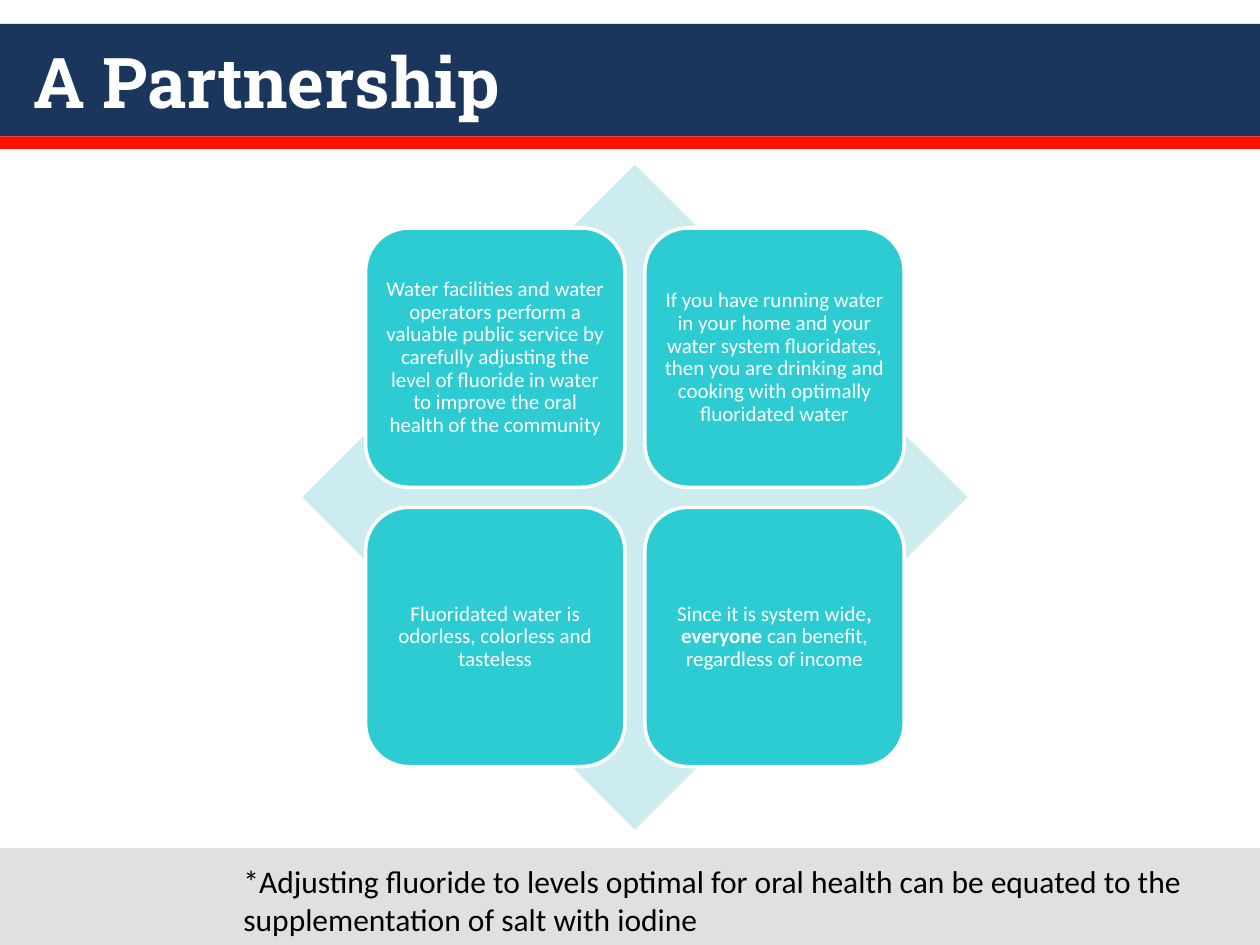
from itertools import product

from pptx import Presentation
from pptx.dml.color import RGBColor
from pptx.enum.shapes import MSO_SHAPE
from pptx.enum.text import MSO_ANCHOR, MSO_AUTO_SIZE, PP_ALIGN
from pptx.util import Pt

NAVY = RGBColor(0x1B, 0x36, 0x5D)
RED = RGBColor(0xFF, 0x0F, 0x00)
GREY = RGBColor(0xE0, 0xE0, 0xE0)
PALE = RGBColor(0xCD, 0xEC, 0xEF)
TEAL = RGBColor(0x2D, 0xCC, 0xD3)
WHITE = RGBColor(0xFF, 0xFF, 0xFF)
BLACK = RGBColor(0x00, 0x00, 0x00)

TITLE = dict(name="Roboto Slab", size=Pt(40), bold=True)
TILE = dict(name="Calibri", size=Pt(12))
NOTE = dict(name="Calibri", size=Pt(18))

# Each tile is a list of (text, bold) runs, in row order.
TILES = [
    [("Water facilities and water operators perform a valuable public service "
      "by carefully adjusting the level of fluoride in water to improve the "
      "oral health of the community", False)],
    [("If you have running water in your home and your water system "
      "fluoridates, then you are drinking and cooking with optimally "
      "fluoridated water", False)],
    [("Fluoridated water is odorless, colorless and tasteless", False)],
    [("Since it is system wide", False), (", everyone ", True),
     ("can benefit, regardless of income", False)],
]
FOOTNOTE = ("*Adjusting fluoride to levels optimal for oral health can be "
            "equated to the supplementation of salt with iodine")


def add_run(p, text, color, fmt):
    r = p.add_run()
    r.text = text
    r.font.color.rgb = color
    for key, value in fmt.items():
        setattr(r.font, key, value)


def add_filled(shapes, kind, x, y, w, h, fill):
    sp = shapes.add_shape(kind, Pt(x), Pt(y), Pt(w), Pt(h))
    sp.shadow.inherit = False
    sp.fill.solid()
    sp.fill.fore_color.rgb = fill
    sp.line.fill.background()
    return sp


def add_header(s, x, y, w, h, stripe):
    """Navy band with the title, above a red stripe."""
    add_filled(s.shapes, MSO_SHAPE.RECTANGLE, x, y, w, h, NAVY)
    add_filled(s.shapes, MSO_SHAPE.RECTANGLE, x, y + h, w, stripe, RED)
    title = s.shapes.title
    s.shapes._spTree.append(title._element)  # bring in front of the band
    title.left, title.top = Pt(x + 12), Pt(y)
    title.width, title.height = Pt(w - 24), Pt(h)
    tf = title.text_frame
    tf.auto_size = MSO_AUTO_SIZE.NONE
    tf.vertical_anchor = MSO_ANCHOR.MIDDLE
    p = tf.paragraphs[0]
    p.alignment = PP_ALIGN.LEFT
    add_run(p, "A Partnership", WHITE, TITLE)


def add_tile(shapes, x, y, side, runs):
    sp = add_filled(shapes, MSO_SHAPE.ROUNDED_RECTANGLE, x, y, side, side, TEAL)
    sp.line.color.rgb = WHITE
    sp.line.width = Pt(2)
    tf = sp.text_frame
    tf.word_wrap = True
    tf.vertical_anchor = MSO_ANCHOR.MIDDLE
    for edge in ("left", "right", "top", "bottom"):
        setattr(tf, f"margin_{edge}", Pt(3.6))
    p = tf.paragraphs[0]
    p.alignment = PP_ALIGN.CENTER
    p.line_spacing = 0.9
    for text, bold in runs:
        add_run(p, text, WHITE, dict(TILE, bold=bold))


def add_matrix(s, x, y, side):
    """Diamond with four tiles, sized as shares of its side."""
    group = s.shapes.add_group_shape()
    add_filled(group.shapes, MSO_SHAPE.DIAMOND, x, y, side, side, PALE)
    margin, tile = 0.095 * side, 0.39 * side
    step = side - 2 * margin - tile
    for (row, col), runs in zip(product(range(2), repeat=2), TILES):
        add_tile(group.shapes, x + margin + col * step,
                 y + margin + row * step, tile, runs)


def add_footer(s, x, y, w, h):
    add_filled(s.shapes, MSO_SHAPE.RECTANGLE, x, y, w, h, GREY)
    tb = s.shapes.add_textbox(Pt(x + 132), Pt(y + 4.5), Pt(633), Pt(h - 4.5))
    tf = tb.text_frame
    tf.word_wrap = True
    add_run(tf.paragraphs[0], FOOTNOTE, BLACK, NOTE)


def main():
    prs = Presentation()
    prs.slide_width, prs.slide_height = Pt(720), Pt(540)
    s = prs.slides.add_slide(prs.slide_layouts[5])
    add_header(s, 0, 13.7, 720, 64.2, 7.2)
    add_matrix(s, 172.8, 94.2, 380)
    add_footer(s, 0, 484.5, 720, 55.5)
    prs.save("out.pptx")


if __name__ == "__main__":
    main()
